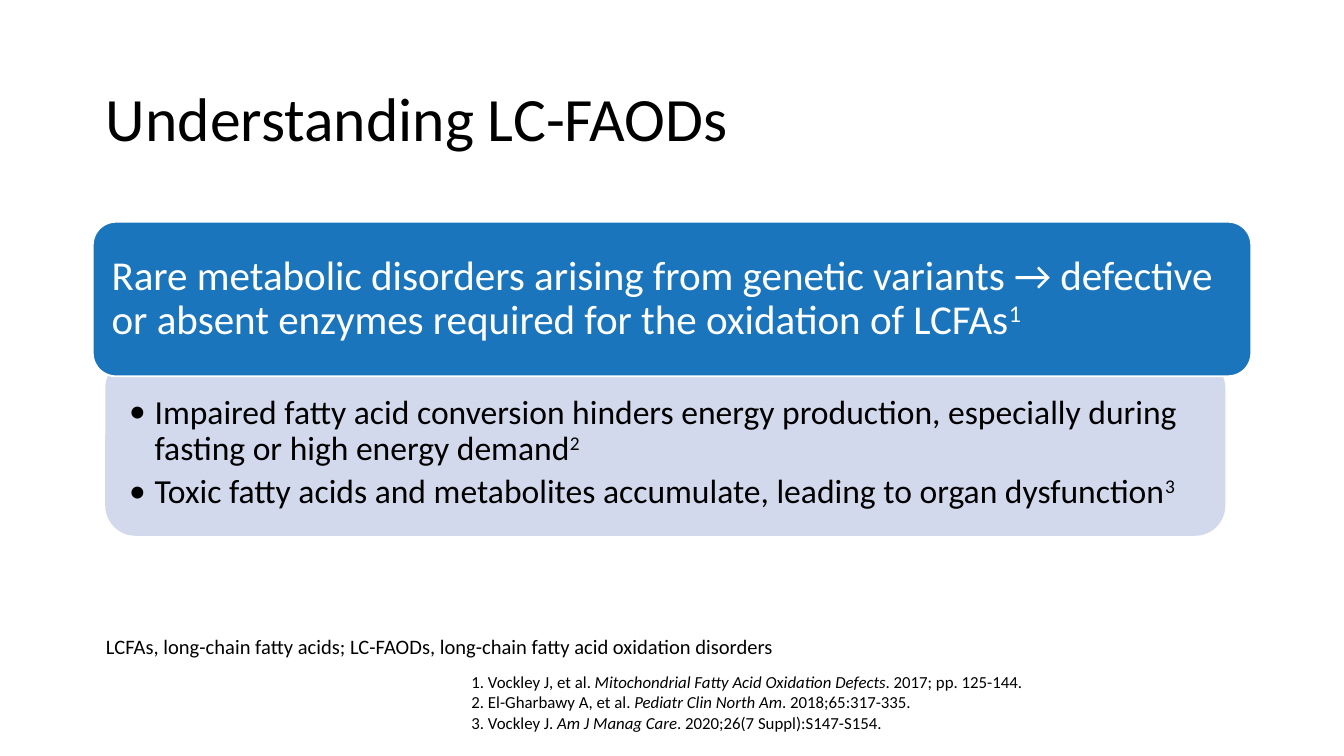
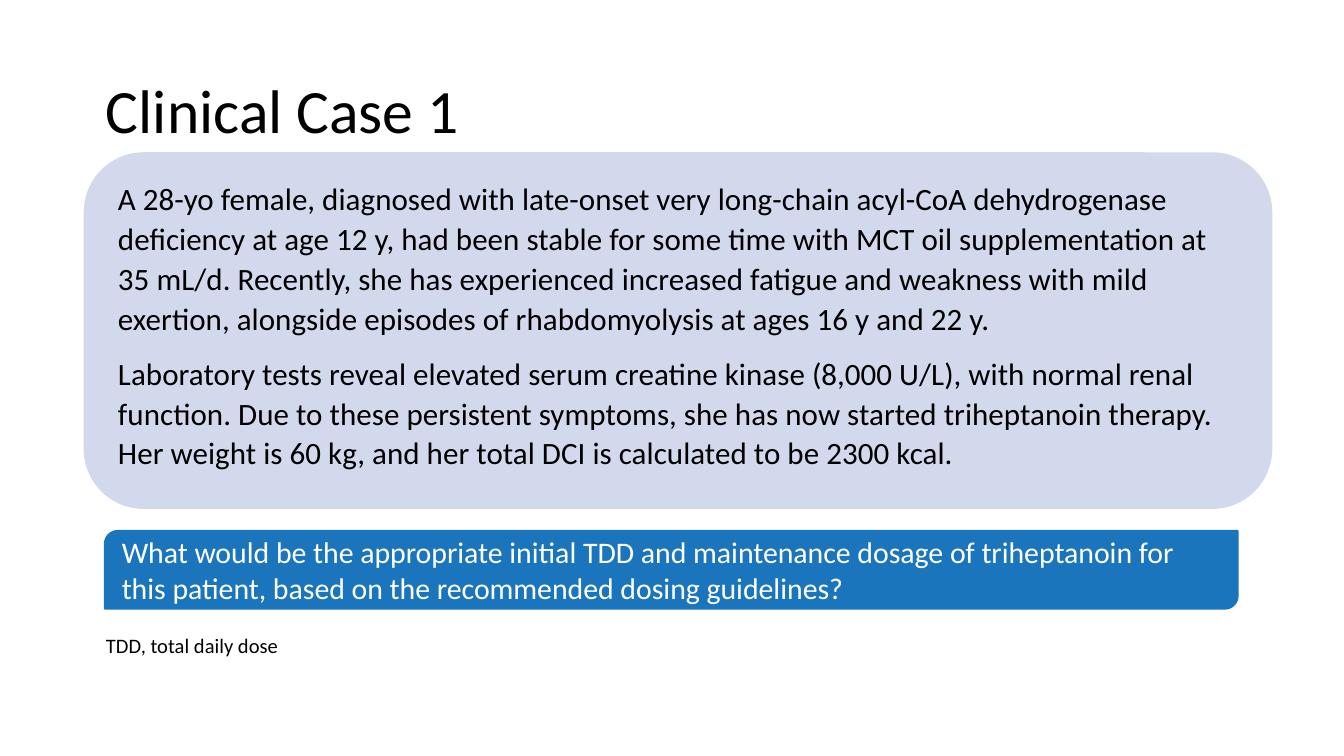
from lxml.etree import SubElement
from pptx import Presentation
from pptx.dml.color import RGBColor
from pptx.enum.shapes import MSO_SHAPE
from pptx.enum.text import MSO_ANCHOR, MSO_AUTO_SIZE, PP_ALIGN
from pptx.oxml.ns import qn
from pptx.util import Inches, Pt

FONT = "Calibri"
BLACK, WHITE, BLUE, LAVENDER = "000000", "FFFFFF", "1A75BC", "D3D9EC"


def add_panel(slide, preset, box, fill, line):
    panel = slide.shapes.add_shape(preset, *[Inches(v) for v in box])
    panel.shadow.inherit = False
    panel.fill.solid()
    panel.fill.fore_color.rgb = RGBColor.from_string(fill)
    panel.line.color.rgb = RGBColor.from_string(line)
    panel.line.width = Pt(1)
    return panel


def write(frame, paragraphs, size, color=BLACK, spacing=1.0, after=0,
          align=PP_ALIGN.LEFT, bullet=False):
    """Fill a text frame; each paragraph is a list of (text, style) runs,
    where style is "", "italic" or "super"."""
    frame.word_wrap = True
    for index, runs in enumerate(paragraphs):
        paragraph = frame.paragraphs[0] if index == 0 else frame.add_paragraph()
        paragraph.alignment = align
        paragraph.line_spacing = spacing
        paragraph.space_after = Pt(after)
        if bullet:
            properties = paragraph._p.get_or_add_pPr()
            properties.set("marL", str(Inches(0.19)))
            properties.set("indent", str(-Inches(0.19)))
            SubElement(properties, qn("a:buFont"), typeface=FONT)
            SubElement(properties, qn("a:buChar"), char="•")
        for text, style in runs:
            run = paragraph.add_run()
            run.text = text
            run.font.name = FONT
            run.font.size = Pt(size)
            run.font.color.rgb = RGBColor.from_string(color)
            if style == "italic":
                run.font.italic = True
            elif style == "super":
                run.font._element.set("baseline", "30000")


prs = Presentation()
prs.slide_width, prs.slide_height = Inches(10), Inches(10 * 9 / 16)
blank = prs.slide_layouts[6]
overview, case = [prs.slides.add_slide(blank) for _ in range(2)]

# Slide 1: a lavender panel tucked under a blue statement
add_panel(overview, MSO_SHAPE.ROUNDED_RECTANGLE, (0.79, 2.67, 8.32, 1.31), LAVENDER, LAVENDER)
statement = add_panel(overview, MSO_SHAPE.ROUNDED_RECTANGLE, (0.69, 1.65, 8.62, 1.15), BLUE, WHITE)
statement.adjustments[0] = 0.15
frame = statement.text_frame
frame.margin_left = frame.margin_right = Inches(0.09)
frame.margin_top = frame.margin_bottom = Inches(0.09)
frame.vertical_anchor = MSO_ANCHOR.MIDDLE
write(frame, [[
    ("Rare metabolic disorders arising from genetic variants → defective or absent "
     "enzymes required for the oxidation of LCFAs", ""),
    ("1", "super"),
]], 22, WHITE, spacing=0.9)

effects = overview.shapes.add_textbox(Inches(0.69), Inches(2.92), Inches(8.62), Inches(1.05))
frame = effects.text_frame
frame.margin_left, frame.margin_right = Inches(0.27), Inches(0.12)
frame.margin_top = frame.margin_bottom = Inches(0.02)
write(frame, [
    [("Impaired fatty acid conversion hinders energy production, especially during "
      "fasting or high energy demand", ""), ("2", "super")],
    [("Toxic fatty acids and metabolites accumulate, leading to organ dysfunction", ""),
     ("3", "super")],
], 18, spacing=0.9, after=3.6, bullet=True)

references = overview.shapes.add_textbox(Inches(3.41), Inches(4.95), Inches(6.53), Inches(0.56))
references.text_frame.auto_size = MSO_AUTO_SIZE.SHAPE_TO_FIT_TEXT
citations = [
    ("1. Vockley J, et al. ", "Mitochondrial Fatty Acid Oxidation Defects", ". 2017; pp. 125-144."),
    ("2. El-Gharbawy A, et al. ", "Pediatr Clin North Am", ". 2018;65:317-335."),
    ("3. Vockley J. ", "Am J Manag Care", ". 2020;26(7 Suppl):S147-S154."),
]
write(references.text_frame,
      [[(authors, ""), (source, "italic"), (issue, "")] for authors, source, issue in citations],
      9, align=PP_ALIGN.JUSTIFY)

# Slide 2: the case history and the question it raises
question = add_panel(case, MSO_SHAPE.ROUND_2_DIAG_RECTANGLE, (0.78, 3.95, 8.43, 0.58), BLUE, BLUE)
question.text_frame.vertical_anchor = MSO_ANCHOR.MIDDLE
write(question.text_frame, [[
    ("What would be the appropriate initial TDD and maintenance dosage of triheptanoin "
     "for this patient, based on the recommended dosing guidelines?", ""),
]], 16, WHITE)

add_panel(case, MSO_SHAPE.ROUNDED_RECTANGLE, (0.63, 1.14, 8.83, 2.64), LAVENDER, LAVENDER)
history = case.shapes.add_textbox(Inches(0.78), Inches(1.27), Inches(8.43), Inches(2.56))
write(history.text_frame, [
    [("A 28-yo female, diagnosed with late-onset very long-chain acyl-CoA dehydrogenase "
      "deficiency at age 12 y, had been stable for some time with MCT oil supplementation "
      "at 35 mL/d. Recently, she has experienced increased fatigue and weakness with mild "
      "exertion, alongside episodes of rhabdomyolysis at ages 16 y and 22 y.", "")],
    [("Laboratory tests reveal elevated serum creatine kinase (8,000 U/L), with normal renal "
      "function. Due to these persistent symptoms, she has now started triheptanoin therapy. "
      "Her weight is 60 kg, and her total DCI is calculated to be 2300 kcal.", "")],
], 16.65, spacing=1.07, after=8)

# Title and abbreviation line on both slides
for slide, heading, spacing, abbreviations, top, width in [
    (overview, "Understanding LC-FAODs", 1.1,
     "LCFAs, long-chain fatty acids; LC-FAODs, long-chain fatty acid oxidation disorders",
     4.67, 5.23),
    (case, "Clinical Case 1", 0.9, "TDD, total daily dose", 4.66, 9.31),
]:
    title = slide.shapes.add_textbox(Inches(0.69), Inches(0.3), Inches(8.62), Inches(1.09))
    title.text_frame.vertical_anchor = MSO_ANCHOR.MIDDLE
    write(title.text_frame, [[(heading, "")]], 33, spacing=spacing)

    footnote = slide.shapes.add_textbox(Inches(0.69), Inches(top), Inches(width), Inches(0.29))
    write(footnote.text_frame, [[(abbreviations, "")]], 11)
    footnote.text_frame.auto_size = MSO_AUTO_SIZE.SHAPE_TO_FIT_TEXT
    footnote.text_frame.word_wrap = slide is case

prs.save("out.pptx")
